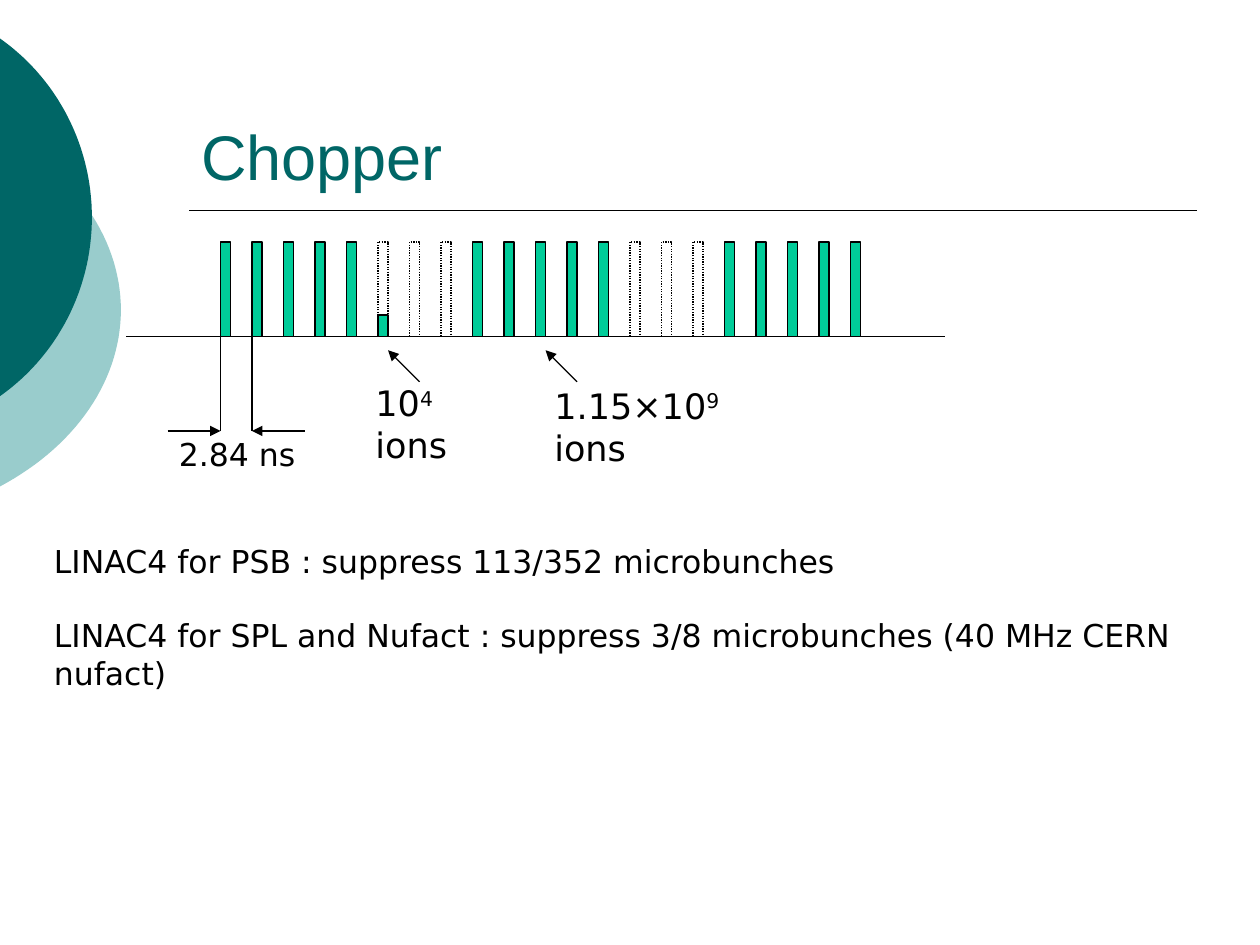
from math import acos, cos, sin

from lxml.etree import SubElement
from pptx import Presentation
from pptx.dml.color import RGBColor
from pptx.enum.dml import MSO_LINE
from pptx.enum.shapes import MSO_CONNECTOR, MSO_SHAPE
from pptx.enum.text import MSO_ANCHOR
from pptx.oxml.ns import qn
from pptx.util import Inches, Pt

BLACK, GREEN, TEAL, PALE = "000000", "00CC99", "006666", "99CCCC"
BODY_FONT = "DejaVu Sans"
BASELINE, BUNCH_TOP, BUNCH_WIDTH = 2.67, 1.92, 0.08
FIRST_BUNCH, SPACING, BUNCH_COUNT = 1.75, 0.25, 21
PERIOD, KEPT = 8, 5


def color(value):
    """Turn a hex string into a colour."""
    return RGBColor.from_string(value)


def add_text(page, left, top, width, height, paragraphs, size=18, font=BODY_FONT,
             fill=BLACK, margins=(0, 0), anchor=MSO_ANCHOR.TOP, gap=0):
    """Add paragraphs, each a list of runs; a run starting with ^ is raised."""
    box = page.shapes.add_textbox(*map(Inches, (left, top, width, height)))
    frame = box.text_frame
    frame.word_wrap = True
    frame.vertical_anchor = anchor
    frame.margin_left = frame.margin_right = Inches(margins[0])
    frame.margin_top = frame.margin_bottom = Inches(margins[1])
    for index, runs in enumerate(paragraphs):
        para = frame.add_paragraph() if index else frame.paragraphs[0]
        para.space_before = Pt(gap if index else 0)
        for text in runs:
            span = para.add_run()
            span.text = text.removeprefix("^")
            span.font.size = Pt(size)
            span.font.name = font
            span.font.color.rgb = color(fill)
            if text.startswith("^"):
                span.font._element.set("baseline", "30000")


def add_line(page, start, end, weight=0.75, arrow=False):
    """Add a straight black line, with an arrowhead at its end if asked."""
    points = map(Inches, (*start, *end))
    line = page.shapes.add_connector(MSO_CONNECTOR.STRAIGHT, *points)
    line.line.color.rgb = color(BLACK)
    line.line.width = Pt(weight)
    if arrow:
        SubElement(line.line._get_or_add_ln(), qn("a:tailEnd"), type="triangle")
    SubElement(line._element.spPr, qn("a:effectLst"))


def add_bunch(page, left, top, filled=True):
    """Add a microbunch bar on the baseline, dotted when suppressed."""
    bounds = map(Inches, (left, top, BUNCH_WIDTH, BASELINE - top))
    bar = page.shapes.add_shape(MSO_SHAPE.RECTANGLE, *bounds)
    bar.shadow.inherit = False
    bar.line.color.rgb = color(BLACK)
    bar.line.width = Pt(0.75)
    if filled:
        bar.fill.solid()
        bar.fill.fore_color.rgb = color(GREEN)
    else:
        bar.fill.background()
        bar.line.dash_style = MSO_LINE.ROUND_DOT


def add_edge_ellipse(page, left, top, width, height, fill, steps=60):
    """Add the part of an ellipse that lies right of the slide's left edge."""
    radius_x, radius_y = width / 2, height / 2
    center_x, center_y = left + radius_x, top + radius_y
    limit = acos(-center_x / radius_x)
    angles = [limit * (2 * step / steps - 1) for step in range(steps + 1)]
    points = [(Inches(center_x + radius_x * cos(angle)),
               Inches(center_y + radius_y * sin(angle))) for angle in angles]
    builder = page.shapes.build_freeform(*points[0])
    builder.add_line_segments(points[1:], close=True)
    shape = builder.convert_to_shape()
    shape.shadow.inherit = False
    shape.fill.solid()
    shape.fill.fore_color.rgb = color(fill)
    shape.line.fill.background()


def add_bunch_train(page):
    """Draw the baseline and the periodic train of microbunches."""
    add_line(page, (1, BASELINE), (7.5, BASELINE))
    for index in range(BUNCH_COUNT):
        add_bunch(page, FIRST_BUNCH + index * SPACING, BUNCH_TOP, index % PERIOD < KEPT)
    add_bunch(page, FIRST_BUNCH + KEPT * SPACING, 2.5)


def add_spacing_mark(page):
    """Mark the time between two microbunches."""
    level = 3.42
    for left, tail in ((FIRST_BUNCH, 1.33), (FIRST_BUNCH + SPACING, 2.42)):
        add_line(page, (left, BASELINE), (left, level))
        add_line(page, (tail, level), (left, level), arrow=True)
    add_text(page, 1.42, 3.45, 1.17, 0.5, [["2.84 ns"]])


def add_ion_labels(page):
    """Label the ion counts of a residual and a full microbunch."""
    for tip, left, top, width, number, power in (
            (4.33, 4.4, 3.05, 1.74, "1.15×10", "^9"),
            (3.08, 2.98, 3.03, 1.1, "10", "^4")):
        add_text(page, left, top, width, 0.43, [[number, power, " ions"]], size=20)
        add_line(page, (tip + 0.25, 3.03), (tip, 2.78), arrow=True)


def main():
    """Build and save the slide."""
    deck = Presentation()
    deck.slide_width, deck.slide_height = Inches(10), Inches(7.5)
    page = deck.slides.add_slide(deck.slide_layouts[6])
    add_edge_ellipse(page, -3.54, 0.75, 4.5, 3.42, PALE)
    add_edge_ellipse(page, -2.65, 0, 3.38, 3.45, TEAL)
    add_line(page, (1.5, 1.67), (9.5, 1.67), weight=1)
    add_bunch_train(page)
    add_spacing_mark(page)
    add_ion_labels(page)
    add_text(page, 1.5, 0.33, 8, 1.25, [["Chopper"]], size=36, font="Arial",
             fill=TEAL, margins=(0.1, 0.05), anchor=MSO_ANCHOR.BOTTOM)
    add_text(page, 0.33, 4.25, 9.08, 1.31, [
        ["LINAC4 for PSB : suppress 113/352 microbunches"],
        ["LINAC4 for SPL and Nufact : suppress 3/8 microbunches (40 MHz CERN nufact)"],
    ], margins=(0.1, 0.05), gap=21)
    deck.save("out.pptx")


if __name__ == "__main__":
    main()
